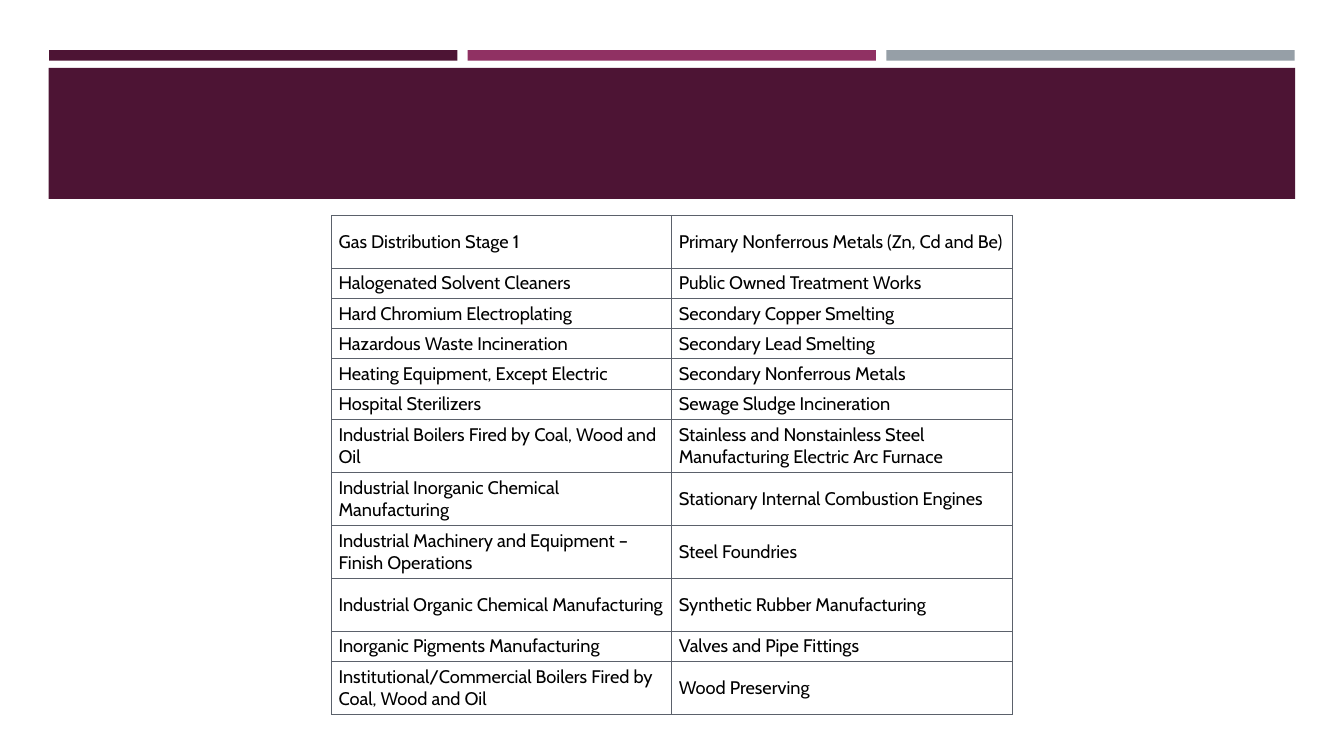
from lxml.etree import SubElement
from pptx import Presentation
from pptx.dml.color import RGBColor
from pptx.enum.shapes import MSO_SHAPE
from pptx.enum.text import MSO_ANCHOR
from pptx.oxml.ns import qn
from pptx.util import Pt

COLORS = {
    "plum": "4D1434",
    "magenta": "903163",
    "gray": "969FA7",
    "border": "5B616B",
    "white": "FFFFFF",
    "black": "000000",
}

SHORT_ROW, TALL_ROW = 21.55, 37.85
TALL_ROWS = {0, 6, 7, 8, 9, 11}
SOURCES = [
    ("Gas Distribution Stage 1", "Primary Nonferrous Metals (Zn, Cd and Be)"),
    ("Halogenated Solvent Cleaners", "Public Owned Treatment Works"),
    ("Hard Chromium Electroplating", "Secondary Copper Smelting"),
    ("Hazardous Waste Incineration", "Secondary Lead Smelting"),
    ("Heating Equipment, Except Electric", "Secondary Nonferrous Metals"),
    ("Hospital Sterilizers", "Sewage Sludge Incineration"),
    ("Industrial Boilers Fired by Coal, Wood and Oil",
     "Stainless and Nonstainless Steel Manufacturing Electric Arc Furnace"),
    ("Industrial Inorganic Chemical Manufacturing",
     "Stationary Internal Combustion Engines"),
    ("Industrial Machinery and Equipment – Finish Operations", "Steel Foundries"),
    ("Industrial Organic Chemical Manufacturing", "Synthetic Rubber Manufacturing"),
    ("Inorganic Pigments Manufacturing", "Valves and Pipe Fittings"),
    ("Institutional/Commercial Boilers Fired by Coal, Wood and Oil",
     "Wood Preserving"),
]


def rgb(name):
    return RGBColor.from_string(COLORS[name])


class SlideBuilder:
    font = "Cabin"
    size = 13
    border_width = 0.75

    def __init__(self, s):
        self.s = s

    def bar(self, left, top, width, height, color):
        sp = self.s.shapes.add_shape(
            MSO_SHAPE.RECTANGLE, Pt(left), Pt(top), Pt(width), Pt(height))
        sp.shadow.inherit = False
        sp.fill.solid()
        sp.fill.fore_color.rgb = rgb(color)
        sp.line.fill.background()

    def table(self, left, top, width, rows, heights):
        columns = len(rows[0])
        table = self.s.shapes.add_table(
            len(rows), columns, Pt(left), Pt(top), Pt(width), Pt(sum(heights))).table
        table.first_row = table.horz_banding = False
        for column in table.columns:
            column.width = Pt(width / columns)
        for i, (texts, height) in enumerate(zip(rows, heights)):
            table.rows[i].height = Pt(height)
            for j, text in enumerate(texts):
                self.cell(table.cell(i, j), text)

    def cell(self, cell, text):
        cell.margin_left = cell.margin_right = Pt(5)
        cell.margin_top = cell.margin_bottom = Pt(2.5)
        cell.vertical_anchor = MSO_ANCHOR.MIDDLE
        self.borders(cell)
        cell.fill.solid()
        cell.fill.fore_color.rgb = rgb("white")
        p = cell.text_frame.paragraphs[0]
        p.text = text
        for r in p.runs:
            r.font.name = self.font
            r.font.size = Pt(self.size)
            r.font.color.rgb = rgb("black")

    def borders(self, cell):
        tcPr = cell._tc.get_or_add_tcPr()
        for side in "LRTB":
            ln = SubElement(tcPr, qn(f"a:ln{side}"), w=str(Pt(self.border_width)))
            fill = SubElement(ln, qn("a:solidFill"))
            SubElement(fill, qn("a:srgbClr"), val=COLORS["border"])


def main():
    prs = Presentation()
    prs.slide_width, prs.slide_height = Pt(960), Pt(540)
    builder = SlideBuilder(prs.slides.add_slide(prs.slide_layouts[6]))

    for i, color in enumerate(("plum", "magenta", "gray")):
        builder.bar(35.1 + i * 299, 35.9, 291.6, 7.5, color)
    builder.bar(34.8, 48.5, 890.4, 93.6, "plum")

    heights = [TALL_ROW if i in TALL_ROWS else SHORT_ROW
               for i in range(len(SOURCES))]
    builder.table(236.9, 153.9, 486, SOURCES, heights)

    prs.save("out.pptx")


if __name__ == "__main__":
    main()
